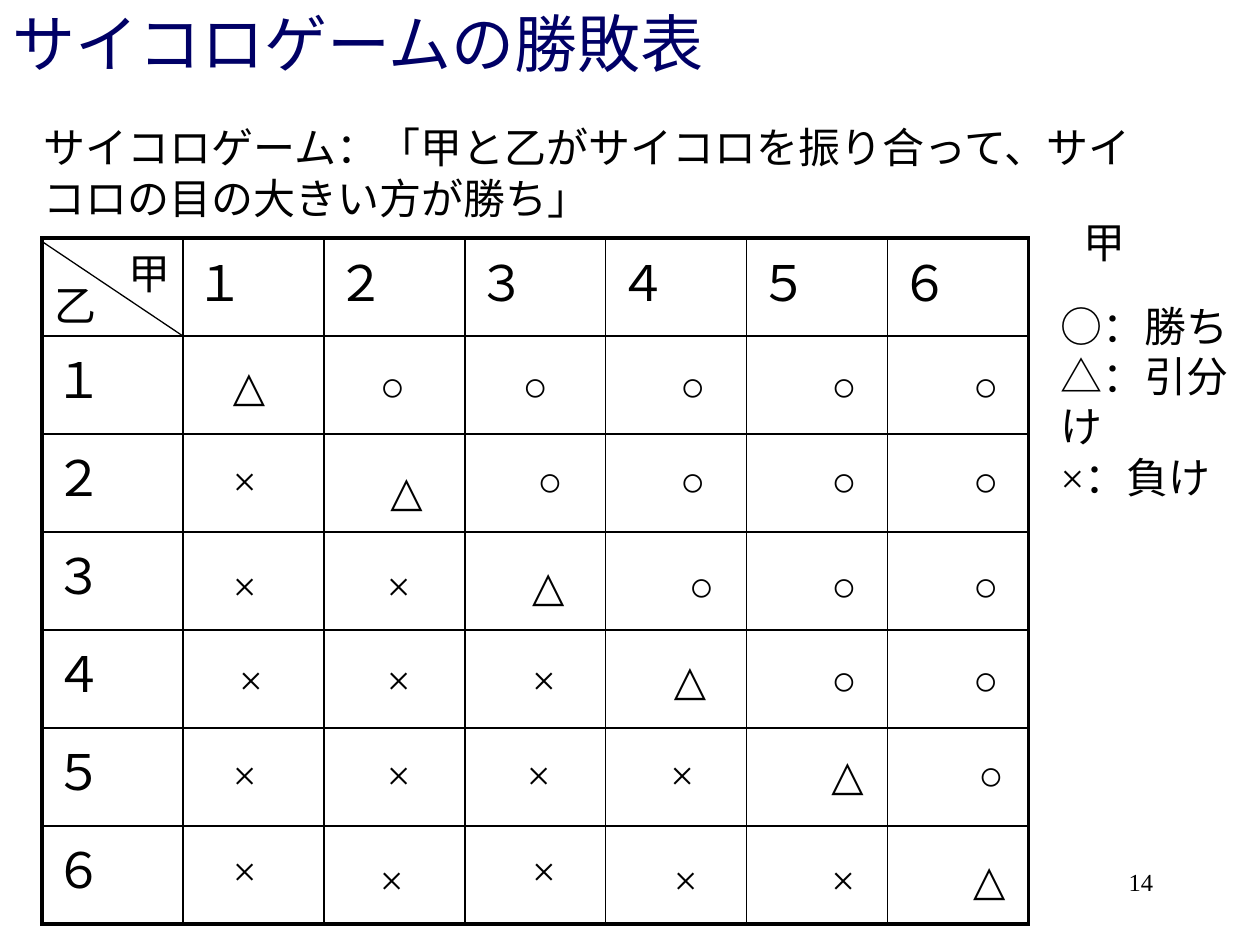
from dataclasses import dataclass

from lxml.etree import SubElement
from pptx import Presentation
from pptx.dml.color import RGBColor
from pptx.enum.shapes import MSO_CONNECTOR
from pptx.enum.text import MSO_ANCHOR, PP_ALIGN
from pptx.oxml import parse_xml
from pptx.oxml.ns import nsdecls, qn
from pptx.util import Pt

TITLE = "サイコロゲームの勝敗表"
RULE = "サイコロゲーム：「甲と乙がサイコロを振り合って、サイコロの目の大きい方が勝ち」"
LEGEND = ["○：勝ち", "△：引分け", "×：負け"]
FIRST_PLAYER, SECOND_PLAYER = "甲", "乙"
WIN, DRAW, LOSS = "○△×"
FACES = "１２３４５６"
PAGE = "14"


@dataclass(frozen=True)
class Theme:
    font: str = "Times New Roman"
    ink: str = "000000"
    title_ink: str = "000066"
    title_size: float = 36
    face_size: float = 28
    body_size: float = 24
    page_size: float = 14
    frame_line: float = 2.25
    grid_line: float = 1
    diagonal_line: float = 0.75


THEME = Theme()
COUNT = len(FACES) + 1
TABLE_LEFT, TABLE_TOP = 24, 136
CELL_WIDTH, CELL_HEIGHT = 80.54, 56
LABEL_SIZE = (38, 36)

# Mark positions by face, then the hand-placed shifts by (row, column).
MARK_LEFTS = [126, 214, 297, 381.5, 468, 549]
MARK_TOPS = [202, 256, 316, 370, 424, 484]
MARK_SHIFTS = {
    (0, 1): (-4, 0), (0, 2): (-5.5, 0),
    (1, 1): (2, 6), (1, 2): (3, 0),
    (2, 3): (5, 0),
    (3, 0): (3.5, 0), (3, 3): (-3.5, 0),
    (4, 2): (-3, 0), (4, 3): (-5.5, 0), (4, 5): (3, 0),
    (5, 0): (0, -5), (5, 1): (-4, 0), (5, 2): (0, -5), (5, 3): (-3.5, 0),
}


def format_text(text_frame, size, color=THEME.ink):
    for paragraph in text_frame.paragraphs:
        for run in paragraph.runs:
            run.font.name = THEME.font
            run.font.size = Pt(size)
            run.font.color.rgb = RGBColor.from_string(color)


def add_text(slide, text, left, top, width, height, size=THEME.body_size, wrap=True):
    box = slide.shapes.add_textbox(Pt(left), Pt(top), Pt(width), Pt(height))
    box.text_frame.text = text
    box.text_frame.word_wrap = wrap
    format_text(box.text_frame, size)
    return box


def add_label(slide, text, left, top):
    add_text(slide, text, left, top, *LABEL_SIZE, wrap=False)


def set_borders(cell, row, column):
    """Draw a thick line on the table's outer edges and a thin one elsewhere."""
    outer_sides = {
        "lnL": column == 0,
        "lnR": column == COUNT - 1,
        "lnT": row == 0,
        "lnB": row == COUNT - 1,
    }
    properties = cell._tc.get_or_add_tcPr()
    for index, (tag, outer) in enumerate(outer_sides.items()):
        width = Pt(THEME.frame_line if outer else THEME.grid_line)
        properties.insert(index, parse_xml(
            f'<a:{tag} {nsdecls("a")} w="{width}"><a:solidFill>'
            f'<a:srgbClr val="{THEME.ink}"/></a:solidFill></a:{tag}>'))


def add_result_table(slide):
    table = slide.shapes.add_table(
        COUNT, COUNT, Pt(TABLE_LEFT), Pt(TABLE_TOP),
        Pt(CELL_WIDTH * COUNT), Pt(CELL_HEIGHT * COUNT)).table
    table.first_row = table.horz_banding = False
    for index in range(COUNT):
        table.columns[index].width = Pt(CELL_WIDTH)
        table.rows[index].height = Pt(CELL_HEIGHT)
    for row in range(COUNT):
        for column in range(COUNT):
            cell = table.cell(row, column)
            cell.fill.background()
            set_borders(cell, row, column)
            if (row == 0) != (column == 0):
                cell.text_frame.text = FACES[max(row, column) - 1]
                cell.text_frame.paragraphs[0].space_before = Pt(0.2 * THEME.face_size)
                format_text(cell.text_frame, THEME.face_size)


def add_marks(slide):
    for row, top in enumerate(MARK_TOPS):
        for column, left in enumerate(MARK_LEFTS):
            mark = DRAW if row == column else WIN if column > row else LOSS
            shift_x, shift_y = MARK_SHIFTS.get((row, column), (0, 0))
            add_label(slide, mark, left + shift_x, top + shift_y)


def add_corner(slide):
    right = TABLE_LEFT + CELL_WIDTH
    diagonal = slide.shapes.add_connector(
        MSO_CONNECTOR.STRAIGHT, Pt(TABLE_LEFT), Pt(138), Pt(right), Pt(192))
    diagonal.line.color.rgb = RGBColor.from_string(THEME.ink)
    diagonal.line.width = Pt(THEME.diagonal_line)
    SubElement(diagonal._element.spPr, qn("a:effectLst"))
    add_label(slide, FIRST_PLAYER, right - LABEL_SIZE[0], 138)
    add_label(slide, SECOND_PLAYER, TABLE_LEFT, 156)


def add_title(slide):
    title = slide.shapes.title
    title.left, title.top, title.width, title.height = Pt(0), Pt(0), Pt(444), Pt(48)
    title.text_frame.text = TITLE
    title.text_frame.vertical_anchor = MSO_ANCHOR.MIDDLE
    title.text_frame.paragraphs[0].alignment = PP_ALIGN.LEFT
    format_text(title.text_frame, THEME.title_size, THEME.title_ink)


def main():
    presentation = Presentation()
    presentation.slide_width, presentation.slide_height = Pt(720), Pt(540)
    slide = presentation.slides.add_slide(presentation.slide_layouts[5])
    add_title(slide)
    page = add_text(slide, PAGE, 516, 492, 150, 36, THEME.page_size)
    page.text_frame.paragraphs[0].alignment = PP_ALIGN.RIGHT
    add_result_table(slide)
    add_marks(slide)
    add_text(slide, RULE, 18, 66, 642, 65)
    add_corner(slide)
    add_text(slide, "\n".join(LEGEND), 599, 168, 121, 94)
    add_label(slide, FIRST_PLAYER, 612, 120)
    presentation.save("out.pptx")


if __name__ == "__main__":
    main()
